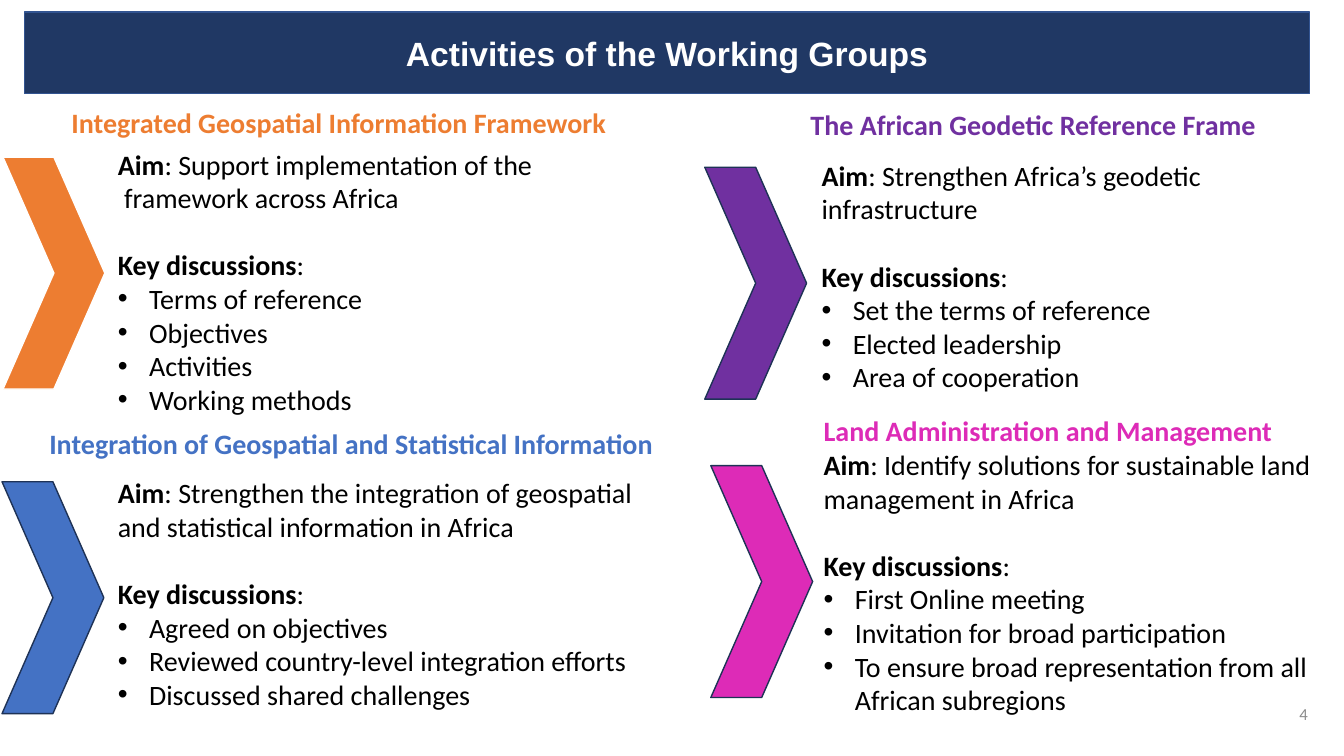
"""Build the slide on the activities of the four working groups."""
from lxml import etree
from pptx import Presentation
from pptx import util as u
from pptx.dml.color import RGBColor
from pptx.enum import shapes, text
from pptx.oxml.ns import qn

PX = 9144
BULLET_INDENT = 31
CHEVRON_SIZE = (101, 230)

WHITE = RGBColor(0xFF, 0xFF, 0xFF)
BLACK = RGBColor(0x00, 0x00, 0x00)
GREY = RGBColor(0x8C, 0x8C, 0x8C)
NAVY = RGBColor(0x20, 0x38, 0x64)
STEEL = RGBColor(0x32, 0x54, 0x91)
OUTLINE = RGBColor(0x1E, 0x32, 0x56)
ORANGE = RGBColor(0xED, 0x7D, 0x31)
PURPLE = RGBColor(0x70, 0x30, 0xA0)
BLUE = RGBColor(0x44, 0x72, 0xC4)
PINK = RGBColor(0xDD, 0x2B, 0xB7)

LEFT, CENTER, RIGHT = text.PP_ALIGN.LEFT, text.PP_ALIGN.CENTER, text.PP_ALIGN.RIGHT

GROUPS = [
    dict(name="Integrated Geospatial Information Framework", color=ORANGE, edge=WHITE,
         align=CENTER, heading=(-6, 100, 684, 44), chevron=(3, 156), body=(107, 141, 525, 279),
         aim=["Support implementation of the", " framework across Africa"],
         points=["Terms of reference", "Objectives", "Activities", "Working methods"]),
    dict(name="The African Geodetic Reference Frame", color=PURPLE, edge=OUTLINE,
         align=LEFT, heading=(794, 102, 490, 44), chevron=(699, 166), body=(805, 152, 502, 246),
         aim=["Strengthen Africa’s geodetic infrastructure"],
         points=["Set the terms of reference", "Elected leadership", "Area of cooperation"]),
    dict(name="Integration of Geospatial and Statistical Information", color=BLUE, edge=OUTLINE,
         align=LEFT, heading=(39, 418, 639, 44), chevron=(2, 478), body=(107, 467, 560, 246),
         aim=["Strengthen the integration of geospatial and statistical information in Africa"],
         points=["Agreed on objectives", "Reviewed country-level integration efforts",
                 "Discussed shared challenges"]),
    dict(name="Land Administration and Management", color=PINK, edge=OUTLINE,
         align=LEFT, heading=(807, 405, 512, 44), chevron=(705, 462), body=(807, 439, 512, 279),
         aim=["Identify solutions for sustainable land management in Africa"],
         points=["First Online meeting", "Invitation for broad participation",
                 "To ensure broad representation from all African subregions"]),
]


def scale(*lengths):
    """Turn px lengths into EMU."""
    return [length * PX for length in lengths]


def paint(shape, fill, edge):
    """Give a shape a solid fill and a one-point outline."""
    shape.fill.solid()
    shape.fill.fore_color.rgb = fill
    shape.line.color.rgb = edge
    shape.line.width = u.Pt(1)


def style(para, size, color, bold=None, name="Calibri"):
    """Set the font that all runs of a paragraph share."""
    font = para.font
    font.name, font.size, font.bold = name, u.Pt(size), bold
    font.color.rgb = color


def set_title(page, words, place):
    """Turn the title placeholder into a rounded banner."""
    title = page.shapes.title
    title.left, title.top, title.width, title.height = scale(*place)
    outline = etree.SubElement(title._element.spPr, qn("a:prstGeom"), prst="roundRect")
    etree.SubElement(outline, qn("a:avLst"))
    paint(title, NAVY, STEEL)
    frame = title.text_frame
    frame.text = words
    frame.auto_size = text.MSO_AUTO_SIZE.NONE
    frame.vertical_anchor = text.MSO_ANCHOR.MIDDLE
    para = frame.paragraphs[0]
    para.alignment = CENTER
    style(para, 24, WHITE, True, "Arial")


def add_frame(page, place):
    """Add a wrapping text box and return its text frame."""
    frame = page.shapes.add_textbox(*scale(*place)).text_frame
    frame.word_wrap = True
    return frame


def add_label(page, words, place, size, color, align, bold=None):
    """Add a one-line text box and return its text frame."""
    frame = add_frame(page, place)
    para = frame.paragraphs[0]
    para.text = words
    para.alignment = align
    style(para, size, color, bold)
    return frame


def add_chevron(page, corner, fill, edge):
    """Add a chevron that points at a group's text."""
    chevron = page.shapes.add_shape(shapes.MSO_SHAPE.CHEVRON, *scale(*corner, *CHEVRON_SIZE))
    chevron.shadow.inherit = False
    paint(chevron, fill, edge)


def add_bullet(para):
    """Give a paragraph a hanging round bullet."""
    props = para._p.get_or_add_pPr()
    indent = BULLET_INDENT * PX
    props.set("marL", str(indent))
    props.set("indent", str(-indent))
    etree.SubElement(props, qn("a:buFont"), typeface="Arial")
    etree.SubElement(props, qn("a:buChar"), char="•")


def write_lead(para, label, rest):
    """Write a bold label followed by plain words."""
    span = para.add_run()
    span.text = label
    span.font.bold = True
    para.add_run().text = rest
    style(para, 20, BLACK)


def add_body(page, place, aim, points):
    """Add the aim and the key discussions of a group."""
    frame = add_frame(page, place)
    write_lead(frame.paragraphs[0], "Aim", ": " + aim[0])
    for words in aim[1:]:
        para = frame.add_paragraph()
        para.text = words
        style(para, 20, BLACK)
    para = frame.add_paragraph()
    para.space_before = u.Pt(24)
    write_lead(para, "Key discussions", ":")
    for words in points:
        para = frame.add_paragraph()
        para.text = words
        add_bullet(para)
        style(para, 20, BLACK)


def main():
    """Build and save the deck."""
    deck = Presentation()
    deck.slide_width, deck.slide_height = u.Inches(13.33), u.Inches(7.5)
    page = deck.slides.add_slide(deck.slide_layouts.get_by_name("Title Only"))
    set_title(page, "Activities of the Working Groups", (24, 12, 1275, 81))
    for group in GROUPS:
        add_label(page, group["name"], group["heading"], 20, group["color"], group["align"], True)
        add_chevron(page, group["chevron"], group["color"], group["edge"])
        add_body(page, group["body"], group["aim"], group["points"])
    number = add_label(page, "4", (1170, 688, 137, 40), 12, GREY, RIGHT)
    number.vertical_anchor = text.MSO_ANCHOR.MIDDLE
    deck.save("out.pptx")


if __name__ == "__main__":
    main()
